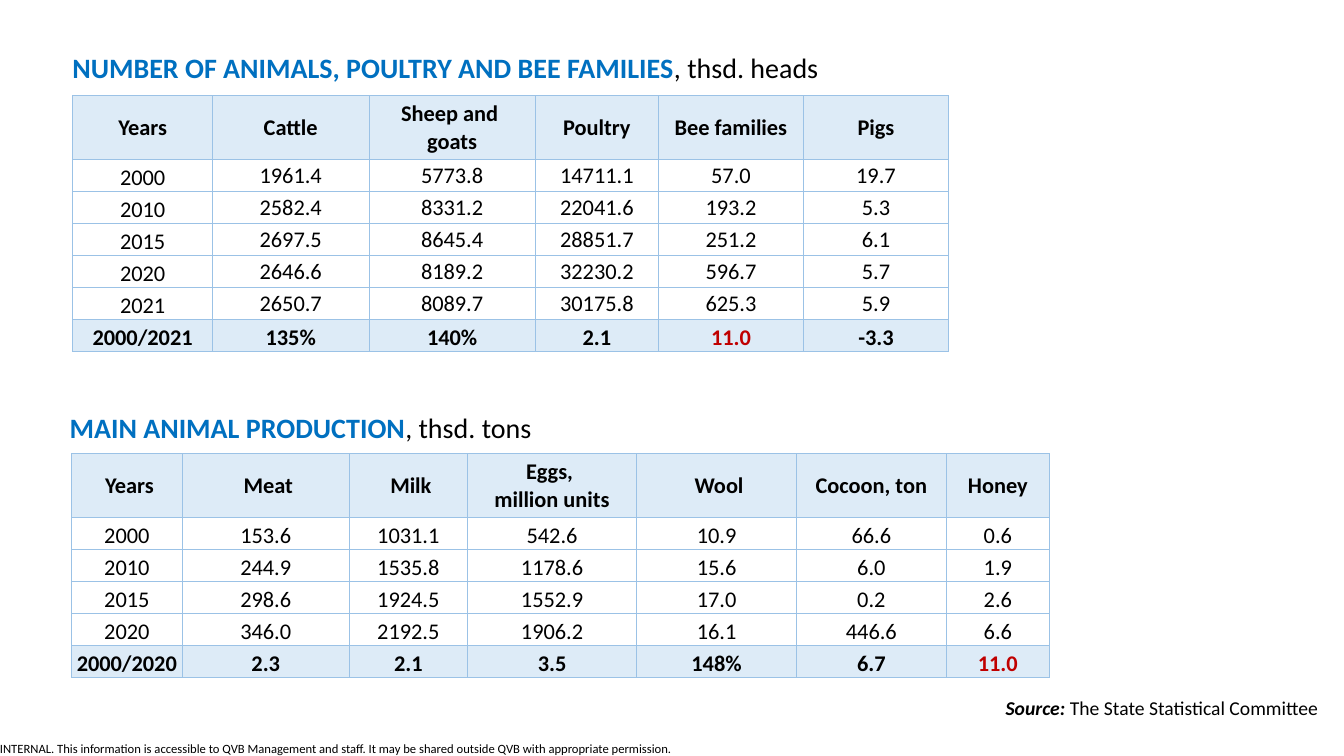
from lxml import etree
from pptx import Presentation
from pptx import util as u
from pptx.dml.color import RGBColor
from pptx.enum import text
from pptx.oxml import ns

COLORS = {
    "black": "000000",
    "blue": "0070C0",
    "red": "C00000",
    "band": "DDEBF7",
    "border": "9BC2E6",
}

ANIMALS = [
    ["Years", "Cattle", "Sheep and \ngoats", "Poultry", "Bee families", "Pigs"],
    ["2000", "1961.4", "5773.8", "14711.1", "57.0", "19.7"],
    ["2010", "2582.4", "8331.2", "22041.6", "193.2", "5.3"],
    ["2015", "2697.5", "8645.4", "28851.7", "251.2", "6.1"],
    ["2020", "2646.6", "8189.2", "32230.2", "596.7", "5.7"],
    ["2021", "2650.7", "8089.7", "30175.8", "625.3", "5.9"],
    ["2000/2021", "135%", "140%", "2.1", "11.0", "-3.3"],
]
PRODUCTION = [
    [" Years", " Meat", " Milk", "Eggs, \nmillion units", " Wool", "Cocoon, ton", "Honey"],
    ["2000", "153.6", "1031.1", "542.6", "10.9", "66.6", "0.6"],
    ["2010", "244.9", "1535.8", "1178.6", "15.6", "6.0", "1.9"],
    ["2015", "298.6", "1924.5", "1552.9", "17.0", "0.2", "2.6"],
    ["2020", "346.0", "2192.5", "1906.2", "16.1", "446.6", "6.6"],
    ["2000/2020", "2.3", "2.1", "3.5", "148%", "6.7", "11.0"],
]


class SlideBuilder:
    font_name = "Calibri"
    header_height = 45.4
    row_height = 22.85

    def __init__(self, slide):
        self.slide = slide

    def format_font(self, font, color="black", **values):
        for name, value in {"name": self.font_name, **values}.items():
            setattr(font, name, value)
        font.color.rgb = RGBColor.from_string(COLORS[color])

    def add_text(self, box, runs, size, inset=None, wrap=False):
        """Add one line of text from (wording, font values) pairs."""
        shape = self.slide.shapes.add_textbox(*map(u.Pt, box))
        frame = shape.text_frame
        frame.word_wrap = wrap
        frame.auto_size = text.MSO_AUTO_SIZE.SHAPE_TO_FIT_TEXT
        if inset is not None:
            for side in ("left", "top", "right", "bottom"):
                setattr(frame, f"margin_{side}", u.Pt(inset))
        for wording, values in runs:
            run = frame.paragraphs[0].add_run()
            run.text = wording
            self.format_font(run.font, size=u.Pt(size), **values)

    def add_heading(self, box, title, unit):
        runs = [(title, {"bold": True, "color": "blue"}), (unit, {"bold": False})]
        self.add_text(box, runs, 20)

    def add_borders(self, cell):
        properties = cell._tc.get_or_add_tcPr()
        for side in ("lnL", "lnR", "lnT", "lnB"):
            line = etree.SubElement(properties, ns.qn(f"a:{side}"), w=str(u.Pt(0.5)))
            fill = etree.SubElement(line, ns.qn("a:solidFill"))
            etree.SubElement(fill, ns.qn("a:srgbClr"), val=COLORS["border"])

    def fill_cell(self, cell, wording, banded, anchor, color):
        values = {
            "margin_left": u.Pt(0.7),
            "margin_top": u.Pt(0.7),
            "margin_right": u.Pt(0.7),
            "margin_bottom": 0,
            "vertical_anchor": anchor,
        }
        for name, value in values.items():
            setattr(cell, name, value)
        self.add_borders(cell)
        if banded:
            cell.fill.solid()
            cell.fill.fore_color.rgb = RGBColor.from_string(COLORS["band"])
        else:
            cell.fill.background()
        paragraph = cell.text_frame.paragraphs[0]
        paragraph.text = wording.replace("\n", "\v")
        paragraph.alignment = text.PP_ALIGN.CENTER
        for run in paragraph.runs:
            self.format_font(run.font, color, size=u.Pt(16), bold=banded)

    def add_table(self, left, top, widths, rows, figure_anchor):
        """Add a table whose first and last rows are banded and bold."""
        last = len(rows) - 1
        height = self.header_height + last * self.row_height
        box = map(u.Pt, (left, top, sum(widths), height))
        table = self.slide.shapes.add_table(len(rows), len(widths), *box).table
        table.first_row = table.horz_banding = False
        for column, width in zip(table.columns, widths):
            column.width = u.Pt(width)
        for i, row in enumerate(rows):
            table.rows[i].height = u.Pt(self.row_height if i else self.header_height)
            for j, wording in enumerate(row):
                if i == 0:
                    anchor = text.MSO_ANCHOR.MIDDLE
                elif i == last or j == 0:
                    anchor = text.MSO_ANCHOR.BOTTOM
                else:
                    anchor = figure_anchor
                color = "red" if i == last and wording == "11.0" else "black"
                self.fill_cell(table.cell(i, j), wording, i in (0, last), anchor, color)


def main():
    presentation = Presentation()
    presentation.slide_width = u.Pt(960)
    presentation.slide_height = u.Pt(540)
    builder = SlideBuilder(presentation.slides.add_slide(presentation.slide_layouts[6]))

    notice = ("INTERNAL. This information is accessible to QVB Management and staff. "
              "It may be shared outside QVB with appropriate permission.")
    builder.add_text((0, 529.2, 482.4, 10.8), [(notice, {})], 9, inset=0, wrap=True)

    builder.add_heading((44.6, 32.4, 553.7, 31.5),
                        "NUMBER OF ANIMALS, POULTRY AND BEE FAMILIES", ", thsd. heads")
    builder.add_table(52, 68.4, [99.8, 111.8, 118.8, 88, 103.6, 103.6],
                      ANIMALS, text.MSO_ANCHOR.MIDDLE)

    source = [("Source: ", {"bold": True, "italic": True}),
              ("The State Statistical Committee", {"bold": False, "italic": False})]
    builder.add_text((711.2, 493.2, 240.5, 24.2), source, 14)

    builder.add_heading((42.6, 290, 349.2, 31.5),
                        "MAIN ANIMAL PRODUCTION", ", thsd. tons")
    builder.add_table(51, 324, [79.2, 119.3, 84.4, 121, 114, 107.2, 73.5],
                      PRODUCTION, text.MSO_ANCHOR.BOTTOM)

    presentation.save("out.pptx")


if __name__ == "__main__":
    main()
